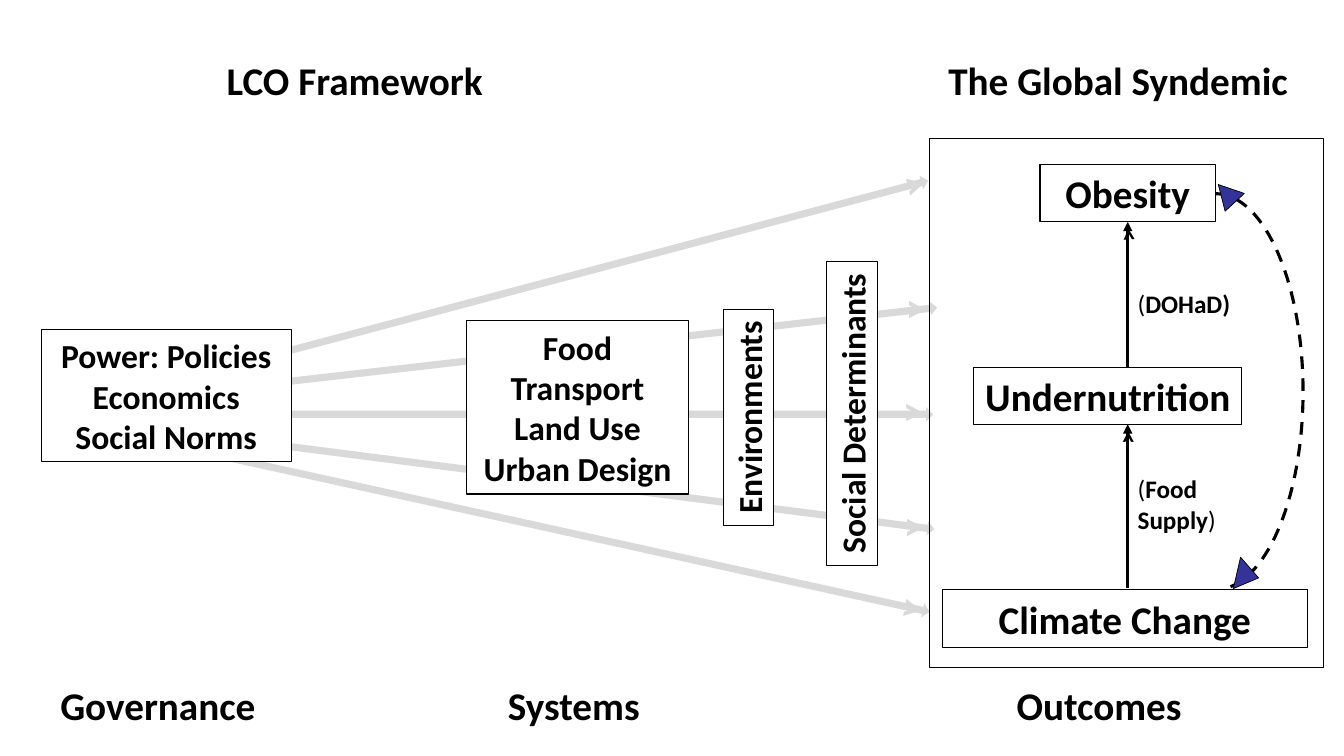
from lxml import etree
from pptx import Presentation
from pptx import util as u
from pptx.dml.color import RGBColor
from pptx.enum import dml, shapes, text
from pptx.oxml import ns

COLOURS = {"ink": "000000", "paper": "FFFFFF", "flow": "D9D9D9", "marker": "333399"}
FONT = "Calibri"
LEFT, CENTER = text.PP_ALIGN.LEFT, text.PP_ALIGN.CENTER
INDENT = 0.48


def colour(name):
    return RGBColor.from_string(COLOURS[name])


def place(at):
    return [u.Cm(length) for length in at]


def add_run(paragraph, words, size, ink="ink", bold=True):
    run = paragraph.add_run()
    run.text = words
    run.font.name = FONT
    run.font.size = u.Pt(size)
    run.font.bold = bold
    run.font.color.rgb = colour(ink)


def add_figure(slide, kind, at, fill=None, line=None, turn=0):
    figure = slide.shapes.add_shape(kind, *place(at))
    figure.shadow.inherit = False
    figure.rotation = turn
    if fill:
        figure.fill.solid()
        figure.fill.fore_color.rgb = colour(fill)
    else:
        figure.fill.background()
    if line:
        figure.line.color.rgb = colour("ink")
        figure.line.width = u.Pt(line)
    else:
        figure.line.fill.background()
    return figure


def add_box(slide, at, words, size=24, fill=None, turn=0, wrap=True):
    box = add_figure(slide, shapes.MSO_SHAPE.RECTANGLE, at, fill, 0.75, turn)
    box.text_frame.word_wrap = wrap
    paragraph = box.text_frame.paragraphs[0]
    paragraph.alignment = CENTER
    add_run(paragraph, words, size)


def add_label(slide, at, lines, size, ink="ink", turn=0, indent=0.25):
    label = slide.shapes.add_textbox(*place(at))
    label.rotation = turn
    frame = label.text_frame
    frame.word_wrap = True
    frame.margin_left = u.Cm(indent)
    for number, line in enumerate(lines):
        paragraph = frame.add_paragraph() if number else frame.paragraphs[0]
        for words, bold in line:
            add_run(paragraph, words, size, ink, bold)


def add_rising_arrow(slide, x, bottom, top):
    arrow = slide.shapes.add_connector(
        shapes.MSO_CONNECTOR.STRAIGHT, *place((x, bottom, x, top)))
    arrow.line.color.rgb = colour("ink")
    arrow.line.width = u.Pt(2.25)
    etree.SubElement(arrow.line._get_or_add_ln(), ns.qn("a:tailEnd"), type="triangle")
    etree.SubElement(arrow._element.spPr, ns.qn("a:effectLst"))


def add_stage_names(slide, at, names, stops):
    stages = slide.shapes.title
    stages.left, stages.top, stages.width, stages.height = place(at)
    frame = stages.text_frame
    frame.auto_size = text.MSO_AUTO_SIZE.NONE
    frame.vertical_anchor = text.MSO_ANCHOR.MIDDLE
    frame.margin_left = u.Cm(INDENT)
    paragraph = frame.paragraphs[0]
    paragraph.alignment = LEFT
    paragraph.line_spacing = 0.9
    tabs = etree.SubElement(paragraph._p.get_or_add_pPr(), ns.qn("a:tabLst"))
    for stop in stops:
        etree.SubElement(tabs, ns.qn("a:tab"), pos=str(int(u.Cm(stop))), algn="l")
    add_run(paragraph, "\t".join(names), 28)


def add_flows(slide):
    for left, top, turn in [(1.32, 7.26, 345.1), (1.07, 10.26, 0), (1.24, 12.83, 12.4),
                            (1.19, 11.73, 7.3), (1.24, 8.84, 353.5)]:
        add_figure(slide, shapes.MSO_SHAPE.RIGHT_ARROW, (left, top, 22.45, 0.36),
                   "flow", turn=turn)


def add_flow_tips(slide):
    for left, top, turn in [(22.28, 9.6, 0), (22.35, 7.01, 0), (22.3, 3.86, 345.9),
                            (22.3, 12.52, 0), (22.25, 14.58, 10.8)]:
        add_label(slide, (left, top, 1.73, 1.45), [[(">", True)]], 28, "flow",
                  turn, INDENT)


def add_drivers(slide):
    add_box(slide, (1.04, 8.31, 6.3, 3.33), "Power: Policies Economics Social Norms",
            fill="paper")
    add_box(slide, (11.76, 8.08, 5.59, 4.37), "Food Transport Land Use Urban Design",
            fill="paper")
    add_box(slide, (16.15, 9.88, 5.44, 1.27), "Environments", fill="paper",
            turn=270, wrap=False)
    add_box(slide, (17.65, 9.78, 7.65, 1.27), "Social Determinants", fill="paper",
            turn=270, wrap=False)


def add_syndemic(slide):
    add_box(slide, (24.54, 9.25, 6.76, 1.45), "Undernutrition", 28, wrap=False)
    add_box(slide, (23.75, 14.86, 9.19, 1.45), "Climate Change", 28)
    add_box(slide, (26.21, 4.14, 4.42, 1.45), "Obesity", 28)
    axis = 28.42
    add_rising_arrow(slide, axis, 9.25, 5.59)
    add_rising_arrow(slide, axis, 14.81, 10.69)
    add_label(slide, (axis, 7.14, 2.87, 1.02), [[("(", False), ("DOHaD)", True)]], 18)
    add_label(slide, (axis, 11.81, 4.52, 1.8),
              [[("(", False), ("Food", True)], [("Supply", True), (")", False)]], 18)

    feedback = add_figure(slide, shapes.MSO_SHAPE.ARC, (axis, 4.88, 4.42, 9.98), line=2.25)
    feedback.adjustments[0] = 162
    feedback.adjustments[1] = 51.332
    feedback.line.dash_style = dml.MSO_LINE.DASH
    for left, top, turn in [(30.1, 4.39, 206.8), (27.74, 5.18, 266.3), (27.74, 10.29, 270)]:
        add_label(slide, (left, top, 1.3, 1.02), [[(">", True)]], 18, turn=turn)
    add_figure(slide, shapes.MSO_SHAPE.RECTANGLE, (23.42, 3.48, 9.93, 13.34), line=0.75)


def add_feedback_tips(slide):
    for at, turn in [((31.04, 14.22, 0.81, 0.56), 103), ((30.58, 4.57, 0.66, 0.61), 317.2)]:
        add_figure(slide, shapes.MSO_SHAPE.ISOSCELES_TRIANGLE, at, "marker", 0.5, turn)


def main():
    deck = Presentation()
    deck.slide_width, deck.slide_height = u.Cm(33.87), u.Cm(19.05)
    slide = deck.slides.add_slide(deck.slide_layouts[5])
    add_stage_names(slide, (1.04, 17.15, 32.31, 1.35),
                    ["Governance", "Systems", "Outcomes"], [11.28, 24.1])
    add_flows(slide)
    add_drivers(slide)
    add_syndemic(slide)
    add_flow_tips(slide)
    add_feedback_tips(slide)
    add_label(slide, (5.46, 1.3, 8.03, 1.45), [[("LCO Framework", True)]], 28)
    add_label(slide, (23.42, 1.3, 9.42, 1.45), [[("The Global Syndemic", True)]], 28,
              indent=INDENT)
    deck.save("out.pptx")


if __name__ == "__main__":
    main()
